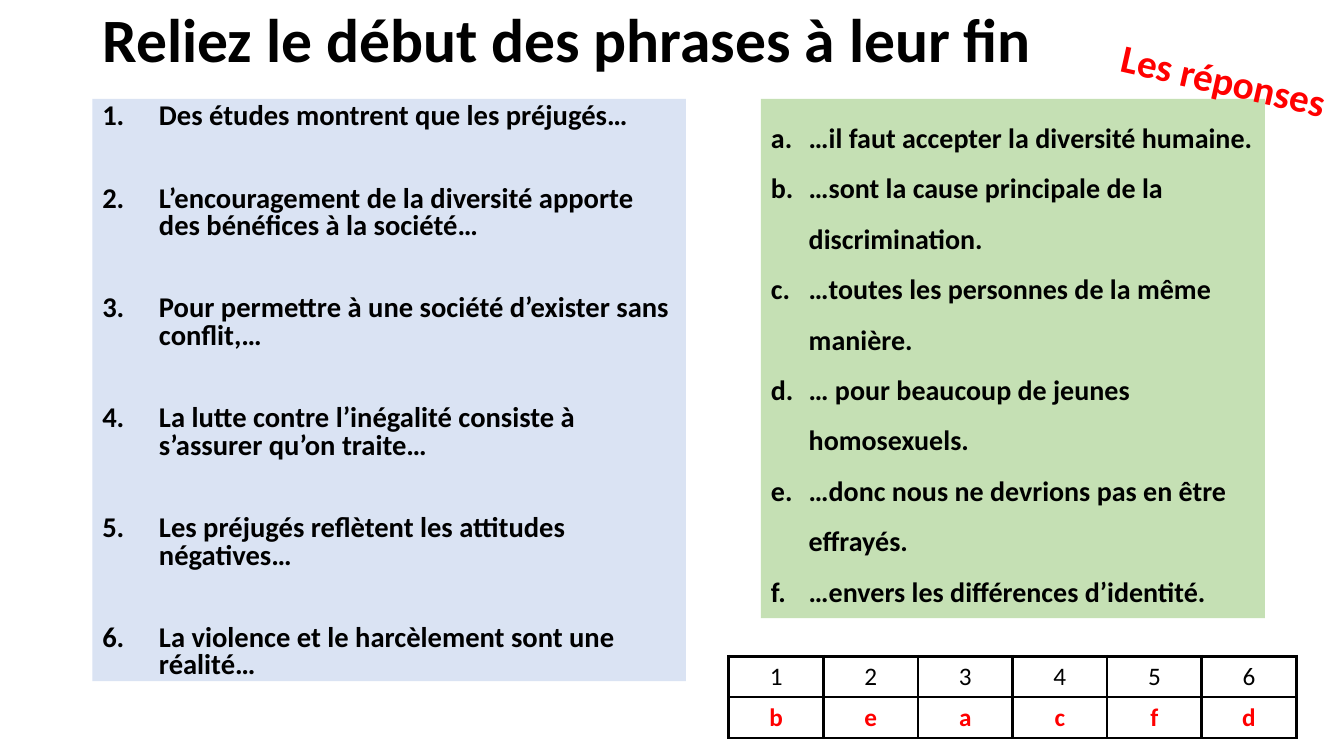
from dataclasses import dataclass

from lxml.etree import SubElement
from pptx import Presentation
from pptx.dml.color import RGBColor
from pptx.enum.shapes import MSO_SHAPE
from pptx.enum.text import MSO_ANCHOR, MSO_AUTO_SIZE, PP_ALIGN
from pptx.oxml.ns import qn
from pptx.util import Pt


@dataclass(frozen=True)
class Theme:
    """Colours, font and type sizes of the slide."""
    font: str = "Calibri"
    ink: str = "000000"
    answer: str = "FF0000"
    beginnings: str = "DAE3F3"
    endings: str = "C5E0B4"
    title_size: float = 44
    label_size: float = 28
    beginning_size: float = 20.4
    ending_size: float = 20
    table_size: float = 18
    border_width: float = 2.25


THEME = Theme()

BEGINNINGS = [
    "Des études montrent que les préjugés…",
    "L’encouragement de la diversité apporte des bénéfices à la société…",
    "Pour permettre à une société d’exister sans conflit,…",
    "La lutte contre l’inégalité consiste à s’assurer qu’on traite…",
    "Les préjugés reflètent les attitudes négatives…",
    "La violence et le harcèlement sont une réalité…",
]
ENDINGS = [
    "…il faut accepter la diversité humaine.",
    "…sont la cause principale de la discrimination.",
    "…toutes les personnes de la même manière.",
    "… pour beaucoup de jeunes homosexuels.",
    "…donc nous ne devrions pas en être effrayés.",
    "…envers les différences d’identité.",
]
ANSWERS = ["123456", "beacfd"]


def apply_format(target, values):
    """Set each named attribute on the target."""
    for name, value in values.items():
        setattr(target, name, value)


def style_font(paragraph, size, color=THEME.ink, bold=True):
    """Give a paragraph its font."""
    apply_format(paragraph.font, {"name": THEME.font, "size": Pt(size), "bold": bold})
    paragraph.font.color.rgb = RGBColor.from_string(color)


def add_title(slide, text):
    """Place and format the title placeholder."""
    title = slide.shapes.title
    apply_format(title, {"left": Pt(66), "top": Pt(0), "width": Pt(828), "height": Pt(60.5)})
    apply_format(title.text_frame, {"text": text, "word_wrap": True,
                                    "auto_size": MSO_AUTO_SIZE.NONE,
                                    "vertical_anchor": MSO_ANCHOR.MIDDLE})
    paragraph = title.text_frame.paragraphs[0]
    apply_format(paragraph, {"alignment": PP_ALIGN.LEFT, "line_spacing": 0.9})
    style_font(paragraph, THEME.title_size)


def add_list_panel(slide, box, fill, items, numbering, indent, size, spacing, gap=0):
    """Add a filled panel holding an automatically numbered list."""
    panel = slide.shapes.add_shape(MSO_SHAPE.RECTANGLE, *map(Pt, box))
    panel.shadow.inherit = False
    panel.fill.solid()
    panel.fill.fore_color.rgb = RGBColor.from_string(fill)
    panel.line.fill.background()
    frame = panel.text_frame
    apply_format(frame, {"word_wrap": True, "vertical_anchor": MSO_ANCHOR.TOP})
    for index, item in enumerate(items):
        paragraph = frame.add_paragraph() if index else frame.paragraphs[0]
        paragraph.text = item
        properties = paragraph._p.get_or_add_pPr()
        properties.set("marL", str(Pt(indent)))
        properties.set("indent", str(-Pt(indent)))
        SubElement(properties, qn("a:buFont"), typeface="+mj-lt")
        SubElement(properties, qn("a:buAutoNum"), type=numbering)
        apply_format(paragraph, {"alignment": PP_ALIGN.LEFT, "line_spacing": spacing,
                                 "space_before": Pt(gap if index else 0)})
        style_font(paragraph, size)


def add_borders(cell):
    """Draw the four borders of a table cell."""
    properties = cell._tc.get_or_add_tcPr()
    for side in ("lnL", "lnR", "lnT", "lnB"):
        line = SubElement(properties, qn(f"a:{side}"), w=str(Pt(THEME.border_width)))
        SubElement(SubElement(line, qn("a:solidFill")), qn("a:srgbClr"), val=THEME.ink)


def add_answer_table(slide, box, rows):
    """Add the table that pairs numbers with letters."""
    table = slide.shapes.add_table(len(rows), len(rows[0]), *map(Pt, box)).table
    apply_format(table, {"first_row": False, "horz_banding": False})
    for row_index, row in enumerate(rows):
        is_answer = row_index > 0
        for column_index, text in enumerate(row):
            cell = table.cell(row_index, column_index)
            cell.text = text
            add_borders(cell)
            cell.fill.background()
            paragraph = cell.text_frame.paragraphs[0]
            paragraph.alignment = PP_ALIGN.CENTER
            style_font(paragraph, THEME.table_size,
                       THEME.answer if is_answer else THEME.ink, is_answer)


def add_label(slide, box, text, rotation):
    """Add a tilted one-line label."""
    label = slide.shapes.add_textbox(*map(Pt, box))
    label.rotation = rotation
    apply_format(label.text_frame, {"text": text, "word_wrap": False,
                                    "auto_size": MSO_AUTO_SIZE.SHAPE_TO_FIT_TEXT})
    style_font(label.text_frame.paragraphs[0], THEME.label_size, THEME.answer)


def main():
    """Build and save the slide."""
    presentation = Presentation()
    apply_format(presentation, {"slide_width": Pt(960), "slide_height": Pt(540)})
    slide = presentation.slides.add_slide(presentation.slide_layouts.get_by_name("Title Only"))
    add_title(slide, "Reliez le début des phrases à leur fin")
    add_list_panel(slide, (66, 70.6, 424, 416), THEME.beginnings, BEGINNINGS,
                   "arabicPeriod", 40.5, THEME.beginning_size, 0.8, 39.3)
    add_list_panel(slide, (543.6, 70.6, 360, 371), THEME.endings, ENDINGS,
                   "alphaLcPeriod", 27, THEME.ending_size, 1.5)
    add_answer_table(slide, (520.6, 468.7, 405.4, 58.4), ANSWERS)
    add_label(slide, (792.7, 36.7, 165, 41), "Les réponses", 12.8)
    presentation.save("out.pptx")


if __name__ == "__main__":
    main()
